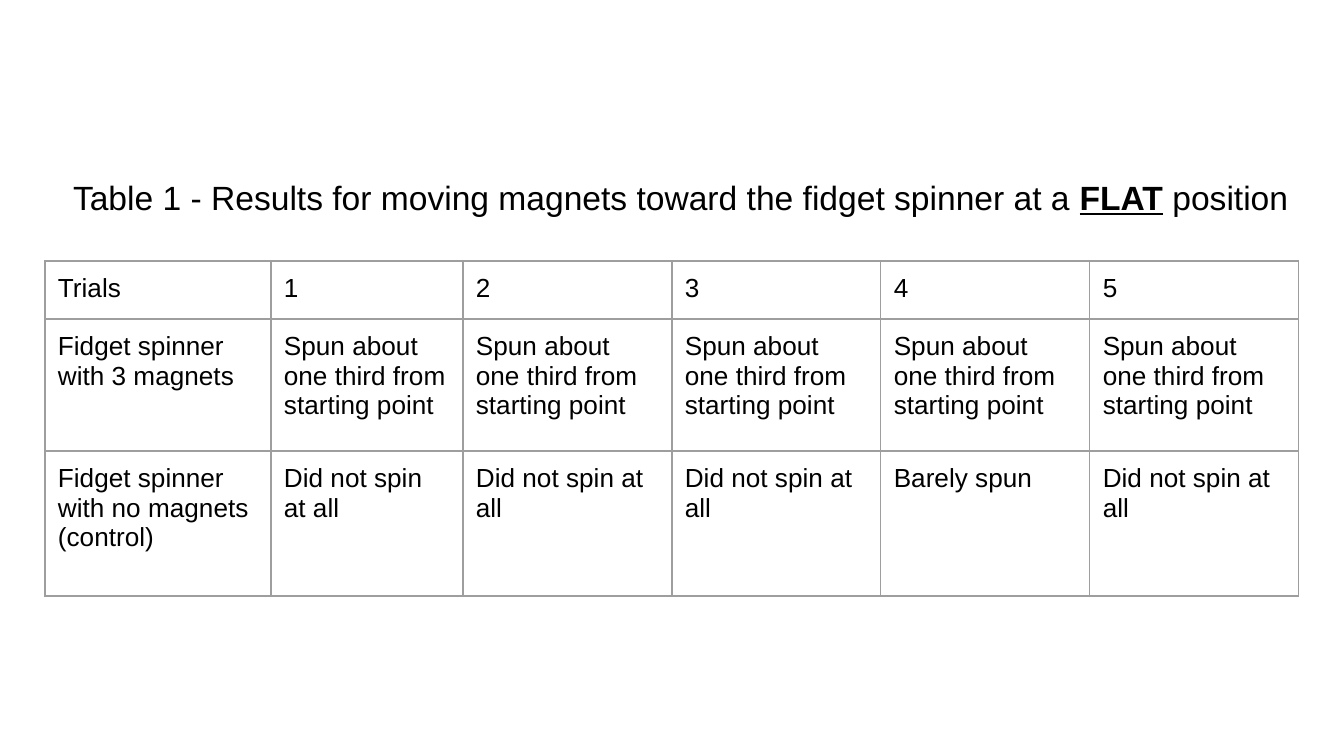
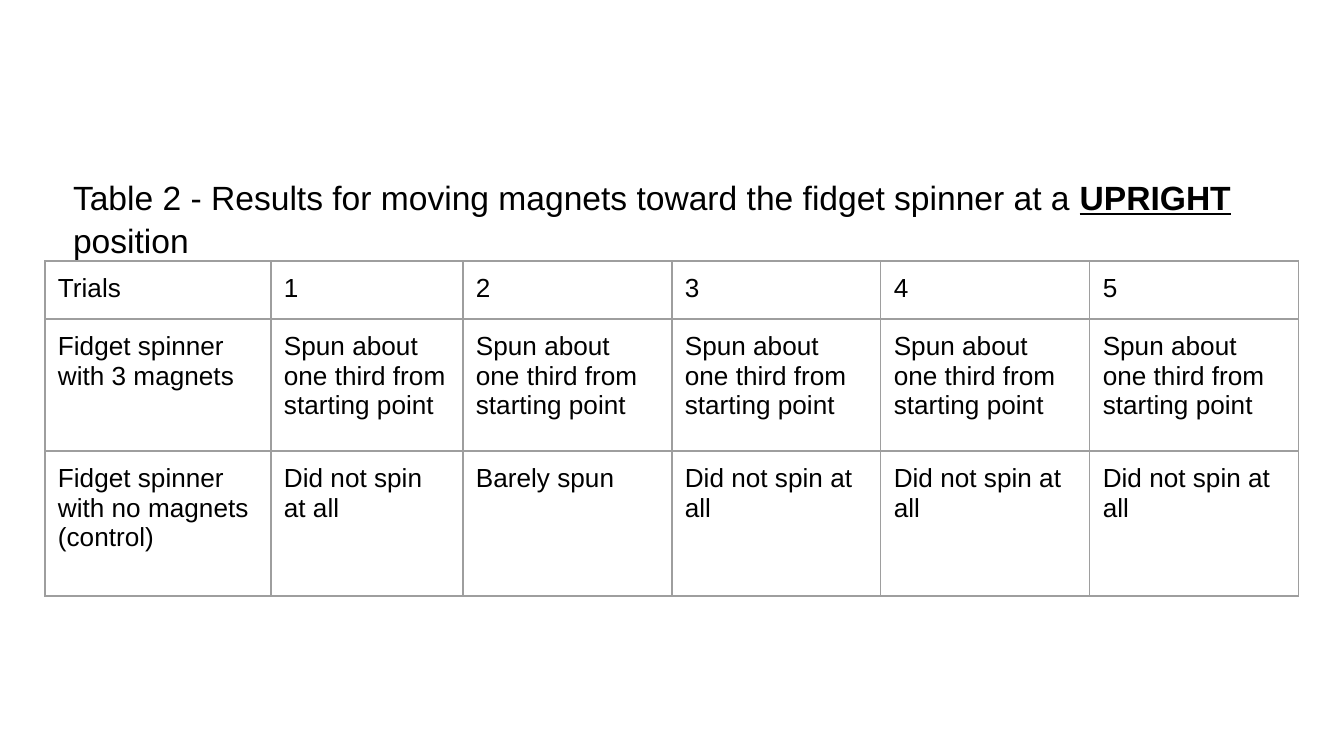
import lxml.etree
import pptx
import pptx.dml.color
import pptx.enum.text
import pptx.oxml.ns
import pptx.util

EMU_PER_PX = 914400 / 134.4
BLACK = pptx.dml.color.RGBColor(0x00, 0x00, 0x00)
WHITE = pptx.dml.color.RGBColor(0xFF, 0xFF, 0xFF)
GREY = pptx.dml.color.RGBColor(0x9E, 0x9E, 0x9E)
FONT = "Arial"
TITLE_ONLY = 5
INSET = 13

TABLE_LEFT, TABLE_TOP = 45, 261
COLUMN_WIDTHS = [226, 192] + [209] * 4
ROW_HEIGHTS = [58, 132, 145]

SPUN = "Spun about one third from starting point"
STILL = "Did not spin at all"
BARELY = "Barely spun"


def px(length):
    return pptx.util.Emu(round(length * EMU_PER_PX))


def format_run(run, size, emphasised=False):
    font = run.font
    font.name = FONT
    font.size = pptx.util.Pt(size)
    font.color.rgb = BLACK
    font.bold = emphasised
    font.underline = emphasised


def set_insets(target):
    """Give a text frame or a table cell equal margins on all sides."""
    target.margin_left = target.margin_right = px(INSET)
    target.margin_top = target.margin_bottom = px(INSET)


def add_title(slide, number, orientation, width, height):
    title = slide.shapes.title
    title.left, title.top = px(60), px(161)
    title.width, title.height = px(width), px(height)
    frame = title.text_frame
    frame.word_wrap = True
    frame.auto_size = pptx.enum.text.MSO_AUTO_SIZE.SHAPE_TO_FIT_TEXT
    frame.vertical_anchor = pptx.enum.text.MSO_ANCHOR.TOP
    set_insets(frame)

    paragraph = frame.paragraphs[0]
    paragraph.alignment = pptx.enum.text.PP_ALIGN.LEFT
    paragraph.line_spacing = 1.07
    lead = f"Table {number} - Results for moving magnets toward the fidget spinner at a "
    for text in (lead, orientation, " position"):
        run = paragraph.add_run()
        run.text = text
        format_run(run, 18, emphasised=text == orientation)


def add_borders(cell):
    properties = cell._tc.get_or_add_tcPr()
    for side in ("a:lnL", "a:lnR", "a:lnT", "a:lnB"):
        line = lxml.etree.SubElement(
            properties, pptx.oxml.ns.qn(side), w=str(pptx.util.Pt(0.75))
        )
        fill = lxml.etree.SubElement(line, pptx.oxml.ns.qn("a:solidFill"))
        lxml.etree.SubElement(fill, pptx.oxml.ns.qn("a:srgbClr"), val=str(GREY))


def format_cell(cell, text):
    cell.text_frame.text = text
    set_insets(cell)
    for run in cell.text_frame.paragraphs[0].runs:
        format_run(run, 14)
    add_borders(cell)
    cell.fill.background()


def add_trials_table(slide, control_results):
    trials = len(control_results)
    rows = [
        ["Trials"] + [str(trial) for trial in range(1, trials + 1)],
        ["Fidget spinner with 3 magnets"] + [SPUN] * trials,
        ["Fidget spinner with no magnets (control)"] + control_results,
    ]
    table = slide.shapes.add_table(
        len(ROW_HEIGHTS), len(COLUMN_WIDTHS), px(TABLE_LEFT), px(TABLE_TOP),
        px(sum(COLUMN_WIDTHS)), px(sum(ROW_HEIGHTS)),
    ).table
    table.first_row = False
    table.horz_banding = False
    for column, width in zip(table.columns, COLUMN_WIDTHS):
        column.width = px(width)
    for row, height, texts in zip(table.rows, ROW_HEIGHTS, rows):
        row.height = px(height)
        for cell, text in zip(row.cells, texts):
            format_cell(cell, text)


def add_results_slide(presentation, number, orientation, title_size, control_results):
    slide = presentation.slides.add_slide(presentation.slide_layouts[TITLE_ONLY])
    slide.background.fill.solid()
    slide.background.fill.fore_color.rgb = WHITE
    add_title(slide, number, orientation, *title_size)
    add_trials_table(slide, control_results)


def main():
    presentation = pptx.Presentation()
    presentation.slide_width, presentation.slide_height = px(1344), px(756)
    add_results_slide(
        presentation, 1, "FLAT", (1253, 67), [STILL, STILL, STILL, BARELY, STILL]
    )
    add_results_slide(
        presentation, 2, "UPRIGHT", (1284, 109), [STILL, BARELY, STILL, STILL, STILL]
    )
    presentation.save("out.pptx")


if __name__ == "__main__":
    main()
